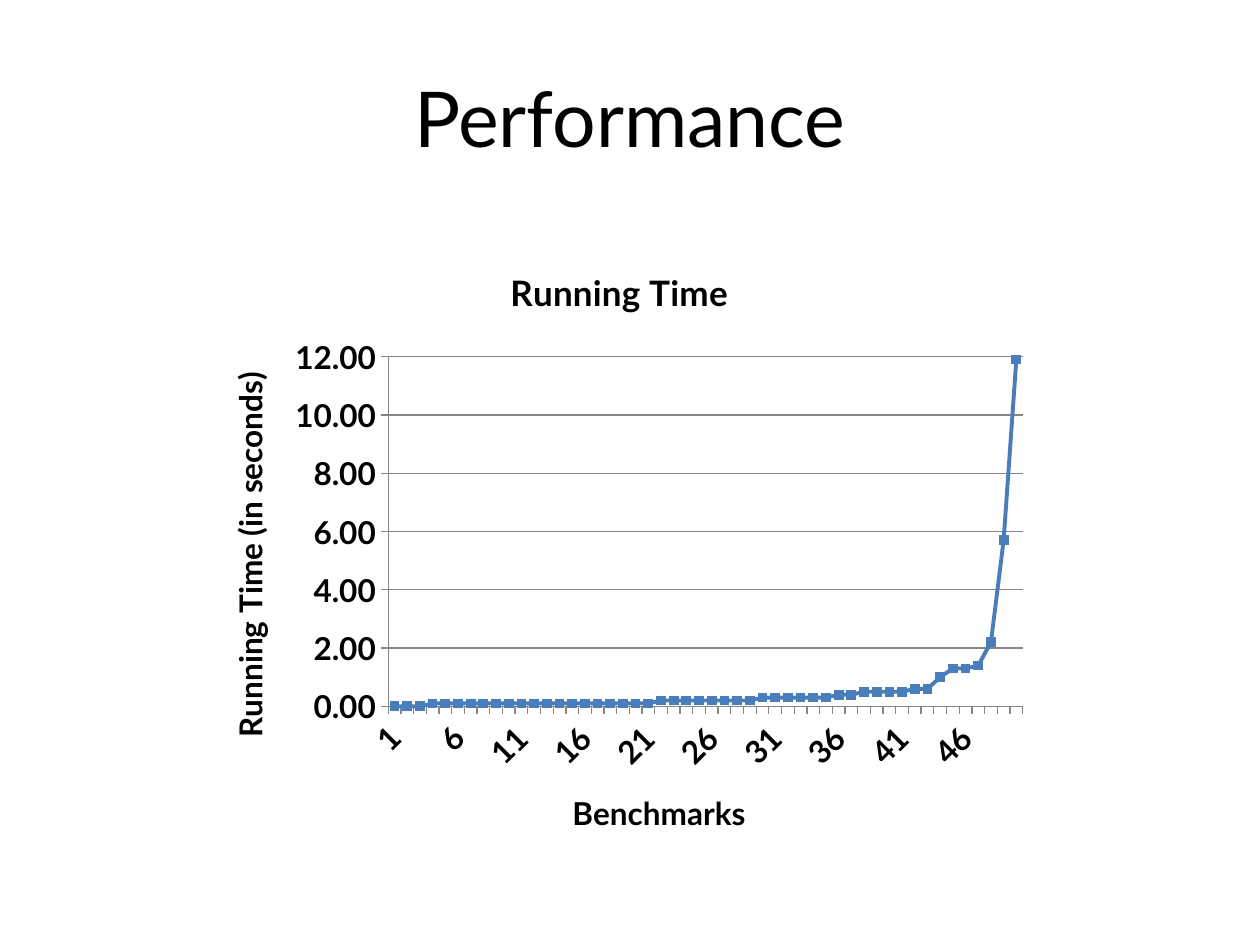
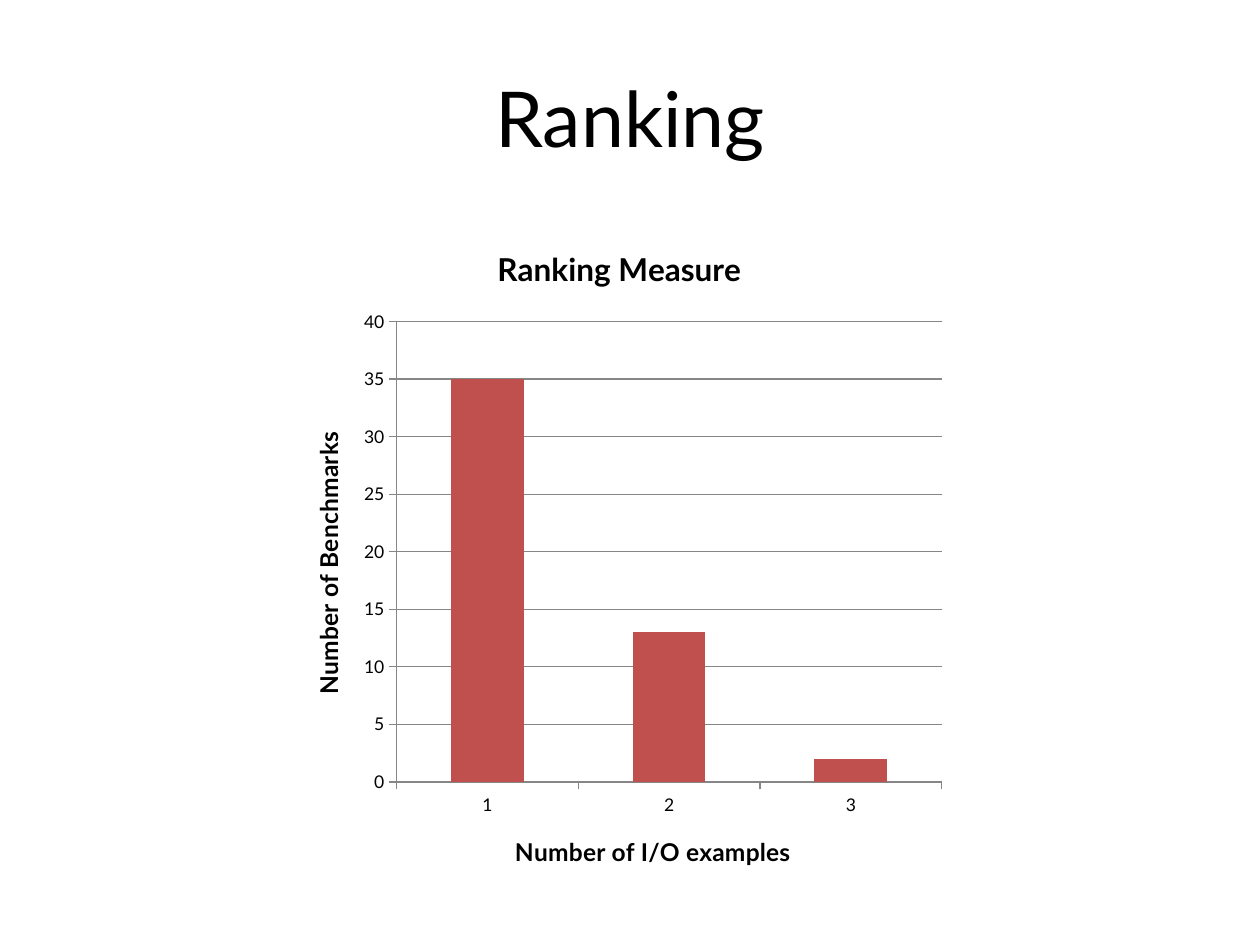
import lxml.etree
import pptx
import pptx.chart.data
import pptx.dml.color
import pptx.enum.chart
import pptx.enum.text
import pptx.util

Inches = pptx.util.Inches
ChartType = pptx.enum.chart.XL_CHART_TYPE

FONT = "Lato"
BLACK = pptx.dml.color.RGBColor(0x00, 0x00, 0x00)
GRID_GRAY = pptx.dml.color.RGBColor(0x86, 0x86, 0x86)
TIME_BLUE = pptx.dml.color.RGBColor(0x4A, 0x7E, 0xBB)
RANK_RED = pptx.dml.color.RGBColor(0xC0, 0x50, 0x4D)

TITLE_ONLY = 5
DIAGONAL = -45 * 60000

# Seconds per benchmark, sorted: each time with the number of benchmarks taking it
TIME_COUNTS = [(0, 3), (0.1, 18), (0.2, 8), (0.3, 6), (0.4, 2), (0.5, 4),
               (0.6, 2), (1, 1), (1.3, 2), (1.4, 1), (2.2, 1), (5.7, 1), (11.9, 1)]
RUNNING_TIMES = [time for time, count in TIME_COUNTS for _ in range(count)]
RANK_COUNTS = [35, 13, 2]


def style_font(font, size, bold=False):
    font.name = FONT
    font.size = pptx.util.Pt(size)
    font.bold = bold
    font.color.rgb = BLACK


def write_text(frame, text, size, bold=False, align=None):
    frame.text = text
    paragraph = frame.paragraphs[0]
    paragraph.alignment = align
    style_font(paragraph.runs[0].font, size, bold)


def add_titled_slide(prs, heading):
    slide = prs.slides.add_slide(prs.slide_layouts[TITLE_ONLY])
    title = slide.shapes.title
    title.left, title.top = Inches(0.5), Inches(0.3)
    title.width, title.height = Inches(9), Inches(1.25)
    title.text_frame.vertical_anchor = pptx.enum.text.MSO_ANCHOR.MIDDLE
    write_text(title.text_frame, heading, 44, align=pptx.enum.text.PP_ALIGN.CENTER)
    return slide


def style_axis(axis, title, title_size, label_size, label_bold):
    write_text(axis.axis_title.text_frame, title, title_size, bold=True)
    style_font(axis.tick_labels.font, label_size, label_bold)
    axis.major_tick_mark = pptx.enum.chart.XL_TICK_MARK.OUTSIDE
    axis.minor_tick_mark = pptx.enum.chart.XL_TICK_MARK.NONE
    axis.format.line.color.rgb = GRID_GRAY
    axis.format.line.width = pptx.util.Pt(0.75)


def add_benchmark_chart(slide, kind, box, values, title, category_title, value_title,
                        title_size, axis_title_size, label_size=10, label_bold=False):
    """Add a chart of values numbered from 1, with titled axes and gray gridlines."""
    data = pptx.chart.data.CategoryChartData()
    data.categories = [str(number) for number in range(1, len(values) + 1)]
    data.add_series("Series 1", values)
    chart = slide.shapes.add_chart(kind, *map(Inches, box), data).chart
    style_font(chart.font, 10)
    chart.has_legend = False
    write_text(chart.chart_title.text_frame, title, title_size, bold=True)
    chart.chart_title.include_in_layout = False
    chart.plots[0].vary_by_categories = False

    style_axis(chart.category_axis, category_title, axis_title_size, label_size, label_bold)
    style_axis(chart.value_axis, value_title, axis_title_size, label_size, label_bold)
    gridlines = chart.value_axis.major_gridlines.format.line
    gridlines.color.rgb = GRID_GRAY
    gridlines.width = pptx.util.Pt(0.75)
    return chart


def turn_labels(axis, angle):
    body = axis._element.find("c:txPr/a:bodyPr", pptx.oxml.ns._nsmap)
    body.set("rot", str(angle))
    body.set("vert", "horz")


def build_performance(prs):
    slide = add_titled_slide(prs, "Performance")
    chart = add_benchmark_chart(
        slide, ChartType.LINE_MARKERS, (1.58, 1.92, 6.67, 4.92), RUNNING_TIMES,
        "Running Time", "Benchmarks", "Running Time (in seconds)",
        title_size=20, axis_title_size=18, label_size=18, label_bold=True)
    turn_labels(chart.category_axis, DIAGONAL)
    seconds = chart.value_axis
    seconds.minimum_scale, seconds.maximum_scale, seconds.major_unit = 0, 12, 2
    seconds.tick_labels.number_format = "0.00"
    seconds.tick_labels.number_format_is_linked = False

    times = chart.plots[0].series[0]
    times.smooth = False
    times.format.line.color.rgb = TIME_BLUE
    times.format.line.width = pptx.util.Pt(2.25)
    times.marker.style = pptx.enum.chart.XL_MARKER_STYLE.SQUARE
    times.marker.size = 5
    times.marker.format.fill.solid()
    times.marker.format.fill.fore_color.rgb = TIME_BLUE
    times.marker.format.line.color.rgb = TIME_BLUE


def build_ranking(prs):
    slide = add_titled_slide(prs, "Ranking")
    chart = add_benchmark_chart(
        slide, ChartType.COLUMN_CLUSTERED, (2.25, 1.75, 5.33, 5.35), RANK_COUNTS,
        "Ranking Measure", "Number of I/O examples", "Number of Benchmarks",
        title_size=18, axis_title_size=14)
    benchmarks = chart.value_axis
    benchmarks.minimum_scale, benchmarks.maximum_scale, benchmarks.major_unit = 0, 40, 5
    chart.plots[0].gap_width = 150
    bars = chart.plots[0].series[0].format.fill
    bars.solid()
    bars.fore_color.rgb = RANK_RED


def main():
    prs = pptx.Presentation()
    prs.slide_width, prs.slide_height = Inches(10), Inches(7.5)
    build_performance(prs)
    build_ranking(prs)
    prs.save("out.pptx")


if __name__ == "__main__":
    main()
